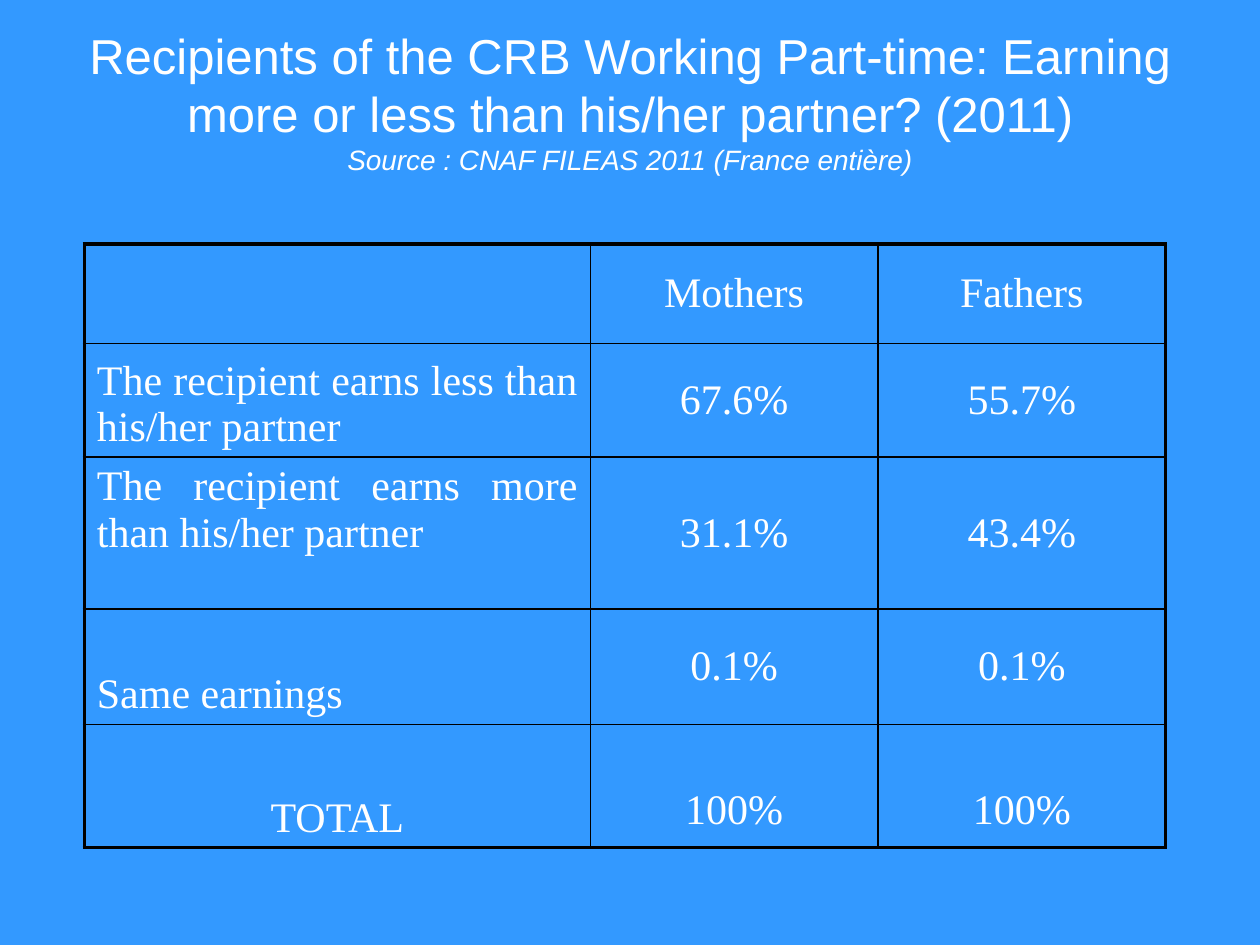
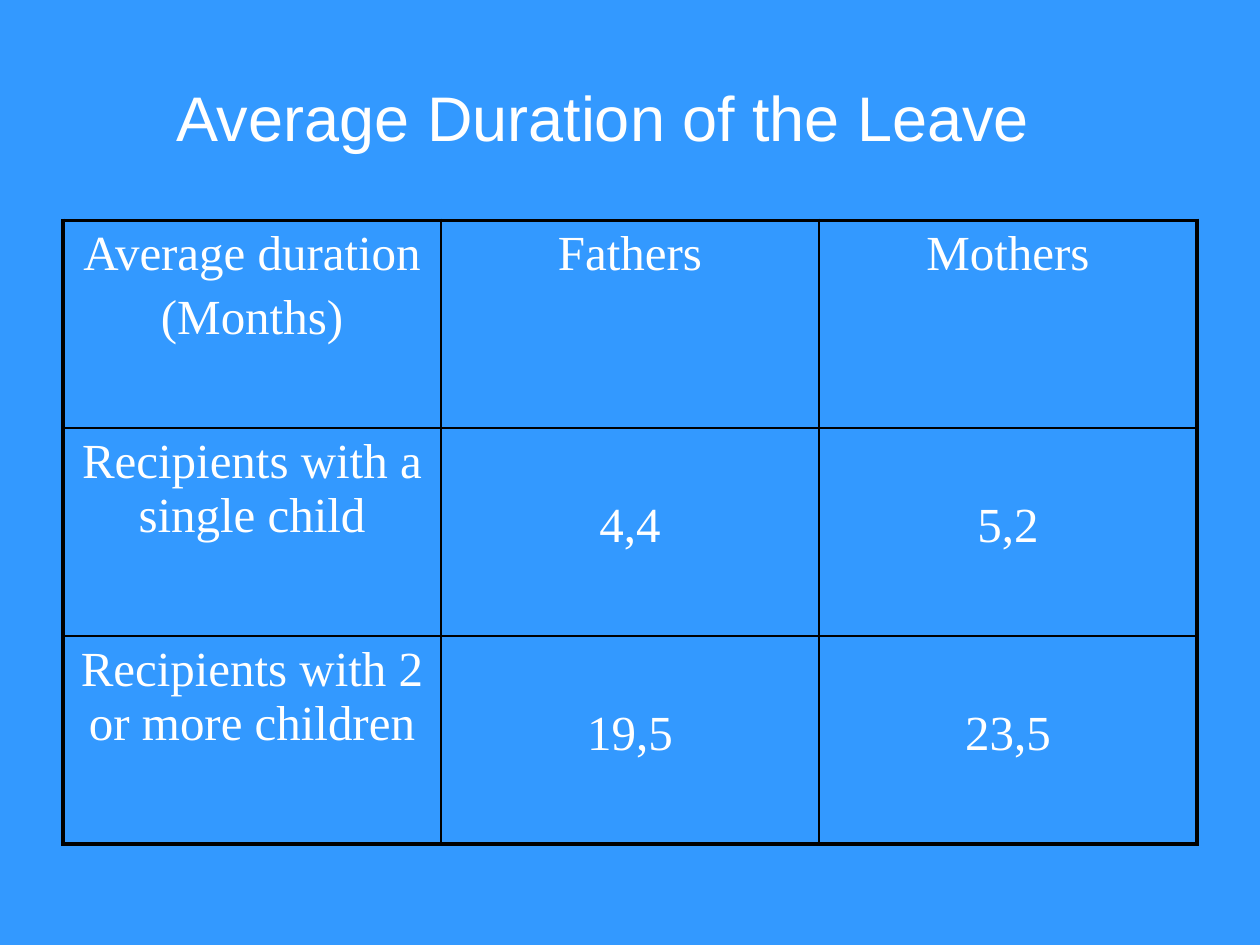
from dataclasses import dataclass

from lxml.etree import SubElement
from pptx import Presentation
from pptx.dml.color import RGBColor
from pptx.enum.text import MSO_ANCHOR as Anchor, MSO_AUTO_SIZE as AutoSize, PP_ALIGN as Align
from pptx.oxml.ns import qn
from pptx.util import Cm, Length, Pt


@dataclass(frozen=True)
class Theme:
    background: str = "3399FF"
    text: str = "FFFFFF"
    rule: str = "000000"
    title_font: str = "Arial"
    table_font: str = "Times New Roman"
    long_title: int = 28
    short_title: int = 36
    source: int = 16
    percentages: int = 24
    durations: int = 28
    outer_rule: float = 2.25
    inner_rule: float = 1


THEME = Theme()


@dataclass(frozen=True)
class Line:
    text: str
    size: int
    italic: bool = False


@dataclass(frozen=True)
class Entry:
    """One table cell; drop is its top margin."""
    lines: tuple[str, ...] = ()
    align: Align = Align.CENTER
    anchor: Anchor = Anchor.MIDDLE
    drop: Length = Cm(0.13)


@dataclass(frozen=True)
class Grid:
    left: Length
    top: Length
    columns: tuple[Length, ...]
    rows: tuple[Length, ...]
    size: int
    entries: list[list[Entry]]


def add_text(paragraph, text: str, font_name: str, size: int, italic: bool = False) -> None:
    run = paragraph.add_run()
    run.text = text
    run.font.name, run.font.size, run.font.italic = font_name, Pt(size), italic
    run.font.color.rgb = RGBColor.from_string(THEME.text)


def paragraphs(frame, count: int) -> list:
    return [frame.paragraphs[0]] + [frame.add_paragraph() for _ in range(count - 1)]


def add_titled_slide(deck, lines: list[Line], right: Length, bottom: Length):
    slide = deck.slides.add_slide(deck.slide_layouts[5])
    title = slide.shapes.title
    title.left, title.top, title.width, title.height = Cm(1.27), Cm(0.76), Cm(22.86), Cm(3.18)
    frame = title.text_frame
    frame.word_wrap, frame.auto_size = True, AutoSize.NONE
    frame.vertical_anchor = Anchor.MIDDLE
    frame.margin_right, frame.margin_bottom = right, bottom
    for paragraph, line in zip(paragraphs(frame, len(lines)), lines):
        paragraph.alignment = Align.CENTER
        add_text(paragraph, line.text, THEME.title_font, line.size, line.italic)
    return slide


def rule_cell(cell, outer_sides: dict[str, bool]) -> None:
    """Draw the four borders, heavier on the outside of the table."""
    properties = cell._tc.get_or_add_tcPr()
    for side, is_outer in outer_sides.items():
        width = Pt(THEME.outer_rule if is_outer else THEME.inner_rule)
        border = SubElement(properties, qn(f"a:{side}"), w=str(int(width)))
        fill = SubElement(border, qn("a:solidFill"))
        SubElement(fill, qn("a:srgbClr"), val=THEME.rule)


def add_grid(slide, grid: Grid) -> None:
    table = slide.shapes.add_table(
        len(grid.rows), len(grid.columns), grid.left, grid.top,
        Length(sum(grid.columns)), Length(sum(grid.rows))).table
    table.first_row = table.horz_banding = False
    for column, width in zip(table.columns, grid.columns):
        column.width = width
    for row, height in zip(table.rows, grid.rows):
        row.height = height
    for r, entries in enumerate(grid.entries):
        for c, entry in enumerate(entries):
            cell = table.cell(r, c)
            rule_cell(cell, {"lnL": c == 0, "lnR": c == len(grid.columns) - 1,
                             "lnT": r == 0, "lnB": r == len(grid.rows) - 1})
            cell.fill.background()
            cell.vertical_anchor, cell.margin_top = entry.anchor, entry.drop
            lines = paragraphs(cell.text_frame, len(entry.lines))
            for i, (paragraph, text) in enumerate(zip(lines, entry.lines)):
                paragraph.alignment = entry.align
                paragraph.space_before = Pt(0.2 * grid.size if i else 0)
                add_text(paragraph, text, THEME.table_font, grid.size)


def label(text: str, anchor: Anchor = Anchor.BOTTOM, align: Align = Align.JUSTIFY) -> Entry:
    return Entry((text,), align, anchor)


def values(*texts: str, anchor: Anchor = Anchor.MIDDLE, drop: Length = Cm(0.13)) -> list[Entry]:
    return [Entry((text,), anchor=anchor, drop=drop) for text in texts]


def add_earnings(deck) -> None:
    slide = add_titled_slide(deck, [
        Line("Recipients of the CRB Working Part-time: Earning more or less than "
             "his/her partner? (2011)", THEME.long_title),
        Line("Source : CNAF FILEAS 2011 (France entière)", THEME.source, italic=True),
    ], right=Cm(0.25), bottom=Cm(0.77))
    add_grid(slide, Grid(
        Cm(1.7), Cm(4.92), (Cm(10.2), Cm(5.8), Cm(5.8)),
        (Cm(2), Cm(2.29), Cm(3.07), Cm(2.32), Cm(2.49)), THEME.percentages, [
            [Entry(), *values("Mothers", "Fathers")],
            [label("The recipient earns less than his/her partner"), *values("67.6%", "55.7%")],
            [label("The recipient earns more than his/her partner", Anchor.TOP),
             *values("31.1%", "43.4%")],
            [label("Same earnings"), *values("0.1%", "0.1%")],
            [label("TOTAL", align=Align.CENTER), *values("100%", "100%", drop=Cm(1.1))],
        ]))


def add_durations(deck) -> None:
    slide = add_titled_slide(deck, [Line("Average Duration of the Leave", THEME.short_title)],
                             right=Cm(1.35), bottom=Cm(0.13))
    top, lowered = Anchor.TOP, Cm(1.42)
    add_grid(slide, Grid(
        Cm(1.27), Cm(4.44), (Cm(7.62),) * 3, (Cm(4.19),) * 3, THEME.durations, [
            [Entry(("Average duration", "(Months)"), anchor=top),
             *values("Fathers", "Mothers", anchor=top)],
            [label("Recipients with a single child", top, Align.CENTER),
             *values("4,4", "5,2", anchor=top, drop=lowered)],
            [label("Recipients with 2 or more children", top, Align.CENTER),
             *values("19,5", "23,5", anchor=top, drop=lowered)],
        ]))


def main() -> None:
    deck = Presentation()
    deck.slide_width, deck.slide_height = Cm(25.4), Cm(19.05)
    # Shared background
    backdrop = deck.slide_master.background.fill
    backdrop.solid()
    backdrop.fore_color.rgb = RGBColor.from_string(THEME.background)
    # Slides
    add_earnings(deck)
    add_durations(deck)
    deck.save("out.pptx")


if __name__ == "__main__":
    main()
